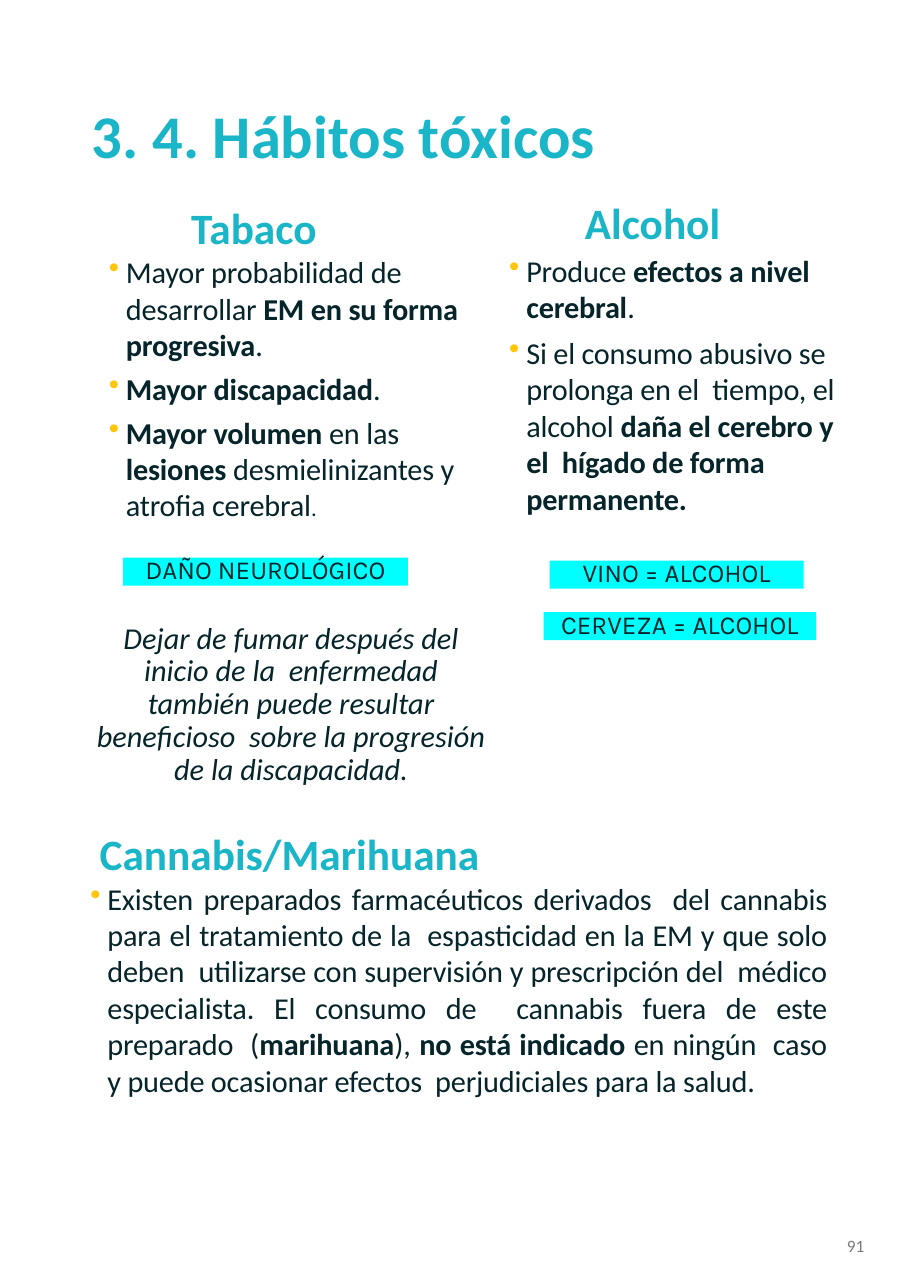
from lxml import etree
from pptx import Presentation
from pptx.dml.color import RGBColor
from pptx.enum.shapes import MSO_SHAPE as Shape
from pptx.enum.text import MSO_ANCHOR as Anchor, MSO_AUTO_SIZE as AutoSize, PP_ALIGN as Align
from pptx.oxml.ns import qn
from pptx.util import Inches, Pt

COLORS = {
    "teal": "1AB6C8",
    "ink": "05252A",
    "bullet": "FFC50A",
    "label": "00FFFF",
    "number": "797979",
}

TOBACCO = [
    [("Mayor probabilidad de desarrollar ", False), ("EM en su forma progresiva", True), (".", False)],
    [("Mayor discapacidad", True), (".", False)],
    [("Mayor volumen ", True), ("en las ", False), ("lesiones ", True),
     ("desmielinizantes y atrofia cerebral", False), (".", False, 10.5)],
]
ALCOHOL = [
    [("Produce ", False), ("efectos a nivel cerebral", True), (".", False)],
    [("Si el consumo abusivo se prolonga en el  tiempo, el alcohol ", False),
     ("daña el cerebro y el  hígado de forma permanente.", True)],
]
CANNABIS = [
    [("Existen preparados farmacéuticos derivados  del cannabis para el tratamiento "
      "de la  espasticidad en la EM y que solo deben  utilizarse con supervisión y "
      "prescripción del  médico especialista. El consumo de  cannabis fuera de este "
      "preparado  (", False),
     ("marihuana", True), ("), ", False), ("no está indicado ", True),
     ("en ningún  caso y puede ocasionar efectos  perjudiciales para la salud.", False)],
]


class HabitsSlide:
    font_name = "Calibri"
    label_font = "Karla"
    body_size = 14
    tracking = "-10"

    def __init__(self, presentation):
        self.slide = presentation.slides.add_slide(presentation.slide_layouts[5])

    def color(self, name):
        return RGBColor.from_string(COLORS[name])

    def frame(self, shape, side=0, top=0, anchor=Anchor.TOP):
        frame = shape.text_frame
        frame.word_wrap = True
        frame.auto_size = AutoSize.NONE
        frame.vertical_anchor = anchor
        frame.margin_left = frame.margin_right = Inches(side)
        frame.margin_top, frame.margin_bottom = Inches(top), 0
        return frame

    def run(self, paragraph, text, size, color="ink", bold=False, italic=False, font_name=None):
        run = paragraph.add_run()
        run.text = text
        font = run.font
        font.name = font_name or self.font_name
        font.size, font.bold, font.italic = Pt(size), bold, italic
        font.color.rgb = self.color(color)
        return run

    def title(self, text, box):
        shape = self.slide.shapes.title
        shape.left, shape.top, shape.width, shape.height = map(Inches, box)
        paragraph = self.frame(shape, top=0.01).paragraphs[0]
        paragraph.alignment = Align.LEFT
        self.run(paragraph, text, 28, "teal", bold=True)

    def text(self, text, box, size, color="ink", align=Align.CENTER, side=0, top=0,
             indent=0, spacing=1.0, anchor=Anchor.TOP, bold=False, italic=False):
        shape = self.slide.shapes.add_textbox(*map(Inches, box))
        paragraph = self.frame(shape, side, top, anchor).paragraphs[0]
        paragraph.alignment = align
        paragraph.line_spacing = spacing
        if indent:
            paragraph._p.get_or_add_pPr().set("marL", str(Inches(indent)))
        self.run(paragraph, text, size, color, bold, italic)

    def heading(self, text, box, **options):
        self.text(text, box, 20, "teal", bold=True, **options)

    def bullets(self, items, box, side=0, top=0, gap=0, align=Align.LEFT):
        shape = self.slide.shapes.add_textbox(*map(Inches, box))
        frame = self.frame(shape, side, top)
        for index, pieces in enumerate(items):
            paragraph = frame.add_paragraph() if index else frame.paragraphs[0]
            paragraph.alignment = align
            if index:
                paragraph.space_before = Pt(gap)
            self.bullet(paragraph)
            for text, bold, *size in pieces:
                run = self.run(paragraph, text, size[0] if size else self.body_size, bold=bold)
                run._r.get_or_add_rPr().set("spc", self.tracking)

    def bullet(self, paragraph):
        properties = paragraph._p.get_or_add_pPr()
        properties.set("marL", str(Inches(0.12)))
        properties.set("indent", str(Inches(-0.11)))
        color = etree.SubElement(properties, qn("a:buClr"))
        etree.SubElement(color, qn("a:srgbClr")).set("val", COLORS["bullet"])
        etree.SubElement(properties, qn("a:buChar")).set("char", "•")

    def label(self, text, left, top, width):
        shape = self.slide.shapes.add_shape(
            Shape.RECTANGLE, Inches(left), Inches(top), Inches(width), Inches(0.18))
        shape.shadow.inherit = False
        shape.fill.solid()
        shape.fill.fore_color.rgb = self.color("label")
        shape.line.fill.background()
        paragraph = self.frame(shape).paragraphs[0]
        paragraph.alignment = Align.CENTER
        paragraph.line_spacing = Pt(12.6)
        self.run(paragraph, text, 12, font_name=self.label_font)


def main():
    presentation = Presentation()
    presentation.slide_width, presentation.slide_height = Inches(5.83), Inches(8.27)
    page = HabitsSlide(presentation)
    page.title("3. 4. Hábitos tóxicos", (0.59, 0.62, 3.8, 0.48))

    # Tobacco column
    page.heading("Tabaco", (0.45, 1.2, 2.32, 0.42), top=0.09, indent=0.04)
    page.bullets(TOBACCO, (0.59, 1.58, 2.56, 1.83), side=0.1, top=0.05, gap=3.4)
    page.label("DAÑO NEUROLÓGICO", 0.79, 3.58, 1.83)
    page.text("Dejar de fumar después del inicio de la  enfermedad también puede resultar "
              "beneficioso  sobre la progresión de la discapacidad.",
              (0.59, 3.98, 2.56, 1.08), 14, top=0.02, spacing=0.9, italic=True)

    # Alcohol column
    page.heading("Alcohol", (2.62, 1.21, 2.92, 0.44), side=0.1, top=0.05, indent=0.22)
    page.bullets(ALCOHOL, (3.26, 1.58, 2.17, 1.74), top=0.04, gap=4.3)
    page.label("VINO = ALCOHOL", 3.53, 3.6, 1.63)
    page.label("CERVEZA = ALCOHOL", 3.49, 3.93, 1.75)

    # Cannabis section
    page.heading("Cannabis/Marihuana", (0.4, 5.26, 2.92, 0.44), side=0.1, top=0.05)
    page.bullets(CANNABIS, (0.57, 5.59, 4.74, 1.71), top=0.06, align=Align.JUSTIFY)

    # Page number
    page.text("91", (4.34, 7.78, 1.31, 0.44), 8, "number", align=Align.RIGHT,
              side=0.1, anchor=Anchor.MIDDLE)

    presentation.save("out.pptx")


if __name__ == "__main__":
    main()
